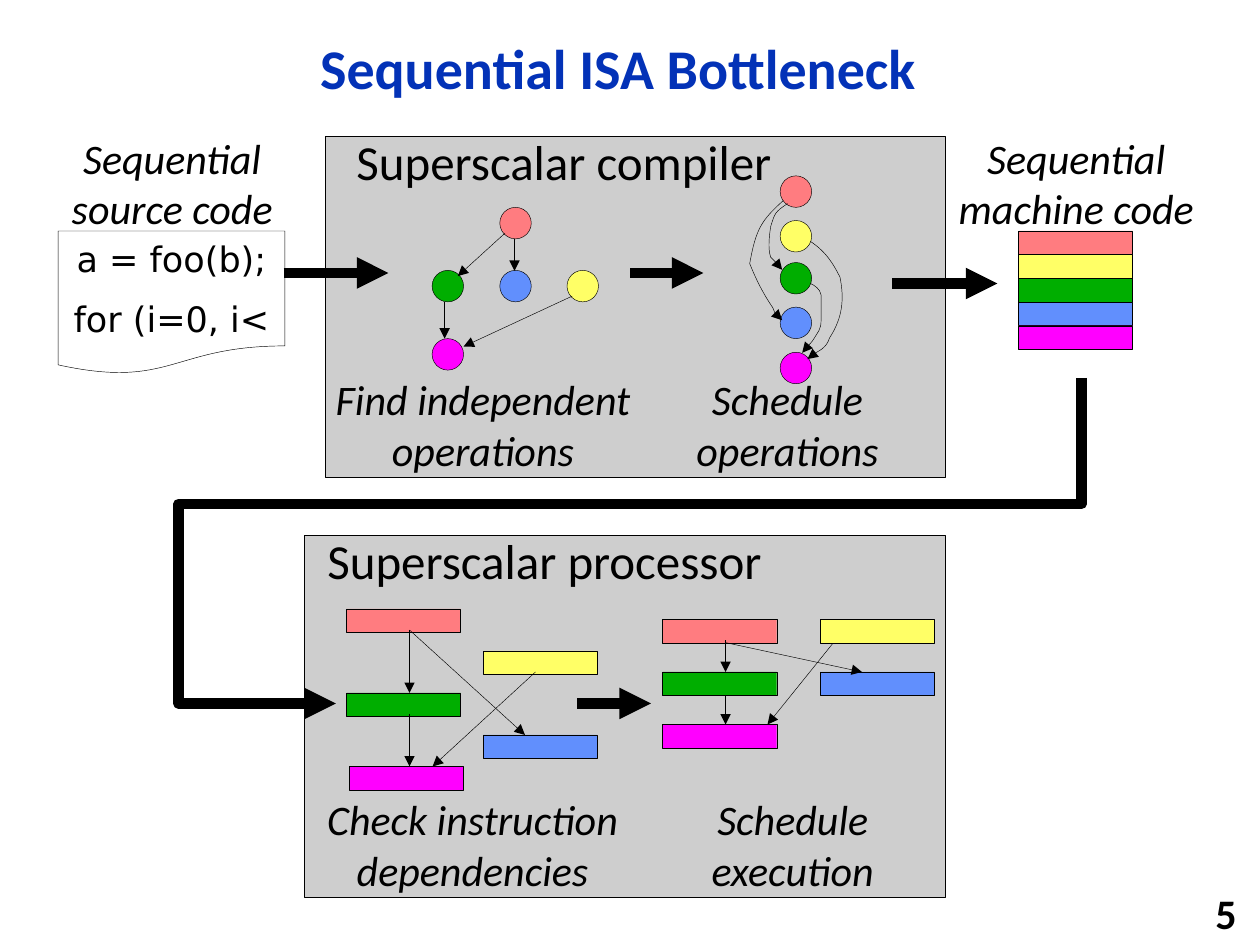
"""Build the slide that shows the bottleneck of a sequential instruction set."""
from lxml.etree import SubElement
from pptx import Presentation
from pptx.dml.color import RGBColor
from pptx.enum.shapes import MSO_CONNECTOR, MSO_SHAPE
from pptx.enum.text import MSO_ANCHOR, PP_ALIGN
from pptx.oxml.ns import qn
from pptx.util import Inches, Pt

THEME = {
    "colors": {
        "red": "FF7C80", "yellow": "FFFF66", "green": "00AE00", "blue": "618FFD",
        "magenta": "FF00FF", "panel": "CECECE", "paper": "FFFFFF", "ink": "000000",
        "title": "0332B7",
    },
    "thin": 0.25,
    "thick": 6,
    "text": {
        "title": {"size": Pt(32), "name": "Calibri", "bold": True},
        "number": {"size": Pt(24), "name": "Calibri", "bold": True},
        "heading": {"size": Pt(28), "name": "Calibri"},
        "caption": {"size": Pt(24), "name": "Calibri", "italic": True},
        "code": {"size": Pt(20), "name": "DejaVu Sans"},
    },
}
COLUMNS = 120
SLIDE_SIZE = {"slide_width": Inches(10), "slide_height": Inches(7.5)}
CELL = SLIDE_SIZE["slide_width"] / COLUMNS

PANELS = [(29, 51, 61, 34.45), (31, 13, 59, 32.5)]
BLOCK_SIZE = (10.88, 2.24)
CIRCLE_SIZE = (3, 3)
CODE_BOX = (5.54, 22, 21.6, 13.65)
CODE_LINES = ["a = foo(b);", "for (i=0, i<"]
COLOR_ORDER = ["red", "yellow", "green", "blue", "magenta"]
BLOCKS = [
    [(33, 58), (46, 62), (33, 66), (46, 70), (33.25, 73)],
    [(63.1, 59), (78.1, 59), (63.1, 64), (78.1, 64), (63.1, 69)],
    [(97, 22 + 2.26 * row) for row in range(len(COLOR_ORDER))],
]
CIRCLES = [
    [(47.6, 19.75), (54, 25.75), (41.15, 25.75), (47.6, 25.75), (41.15, 32.25)],
    [(74.3, top) for top in (16.75, 21, 25, 29.25, 33.55)],
]

THIN_ARROWS = [
    ((39, 60), (39, 66)), ((39, 68), (39, 73)),
    ((51, 64), (41.2, 73)), ((39, 60), (50, 70)),
    ((69.1, 61), (69.1, 64)), ((69.1, 61.2), (82.1, 64)),
    ((79.3, 61.3), (73.1, 69)), ((69.1, 66.2), (69.1, 69)),
    ((48.1, 22.2), (43.6, 26.3)), ((49, 22.8), (49, 25.8)),
    ((42.35, 28.8), (42.35, 32.25)), ((54.5, 28.2), (44.15, 33)),
]
THICK_ARROWS = [
    ((27, 26), (37, 26)), ((60, 26), (67, 26)),
    ((85, 27), (95, 27)), ((55, 67), (62, 67)),
]
FEEDBACK = [(103, 36), (103, 48), (17, 48), (17, 67), (32, 67)]
CURVES = [
    [(77.2, 23), (78.7, 24), (79.4, 25.2), (80, 26.4), (80.4, 28.4), (80.3, 30.2),
     (79, 32.2), (78.7, 33.2), (77.3, 33.7), (77.5, 33.8), (76.9, 34.2)],
    [(75, 19.4), (73.8, 20.2), (73.8, 20.3), (73.4, 21.6), (73.3, 22.3),
     (73.1, 23.6), (73.4, 24.5), (73.7, 24.7), (74.5, 25.7), (74.5, 25.7)],
    [(74.6, 19.1), (72.5, 21), (72, 21.8), (71.4, 25.1), (72, 26.6), (72.7, 28),
     (73.6, 29.3), (73.9, 30), (73.6, 29.6), (74.2, 30.2), (74.2, 30.2),
     (74.5, 30.5), (74.5, 30.5)],
    [(77.2, 27), (77.6, 27.2), (78.1, 27.5), (78.2, 28.1), (78.2, 28.4),
     (78.2, 28.8), (78.2, 29.2), (78.2, 29.3), (78.2, 30.5), (78.2, 30.5),
     (78.2, 31.4), (77.9, 31.6), (77.5, 32.3), (77.3, 32.6), (76.9, 33),
     (76.7, 33.2), (76.7, 33.4), (76.4, 33.6), (76.4, 33.6)],
]

CENTER = {"alignment": PP_ALIGN.CENTER}
LABELS = [
    ("Sequential ISA Bottleneck", (11, 2, 95.75, 9.65), "title", "title",
     {"alignment": PP_ALIGN.CENTER, "line_spacing": 0.9},
     {"word_wrap": True, "vertical_anchor": MSO_ANCHOR.MIDDLE}),
    ("5", (94, 85, 24.95, 3.8), "number", "ink", {"alignment": PP_ALIGN.RIGHT},
     {"word_wrap": False, "vertical_anchor": MSO_ANCHOR.MIDDLE}),
] + [
    (text, place, "heading", "ink", CENTER, {"word_wrap": False})
    for text, place in [
        ("Superscalar processor", (29.65, 49.9, 44.4, 6.85)),
        ("Superscalar compiler", (32.4, 11.9, 42.6, 6.85)),
    ]
] + [
    (text, (left, top, width, 10.9), "caption", "ink", CENTER, {"word_wrap": True})
    for text, left, top, width in [
        ("Sequential source code", 5, 12, 22.8),
        ("Sequential machine code", 89, 12, 27),
        ("Find independent operations", 30, 35, 32),
        ("Schedule operations", 59, 35, 32),
        ("Check instruction dependencies", 28, 75, 34),
        ("Schedule execution", 60, 75, 31),
    ]
]


def cells(*values):
    return [round(value * CELL) for value in values]


def color(name):
    return RGBColor.from_string(THEME["colors"][name])


def apply(target, values):
    for name, value in values.items():
        setattr(target, name, value)


def style_line(shape, weight, arrow=False):
    shape.line.width = Pt(THEME[weight])
    shape.line.color.rgb = color("ink")
    if arrow:
        SubElement(shape.element.spPr.find(qn("a:ln")), qn("a:tailEnd"), type="triangle")


def write(paragraph, text, style, ink, layout):
    apply(paragraph, layout)
    run = paragraph.add_run()
    run.text = text
    apply(run.font, THEME["text"][style])
    run.font.color.rgb = color(ink)


def add_filled(shapes, kind, place, fill):
    shape = shapes.add_shape(kind, *cells(*place))
    shape.shadow.inherit = False
    shape.fill.solid()
    shape.fill.fore_color.rgb = color(fill)
    style_line(shape, "thin")
    return shape


def add_arrow(shapes, start, end, weight):
    arrow = shapes.add_connector(MSO_CONNECTOR.STRAIGHT, *cells(*start, *end))
    style_line(arrow, weight, arrow=True)
    SubElement(arrow.element.spPr, qn("a:effectLst"))


def add_route(shapes, points, weight):
    builder = shapes.build_freeform(*cells(*points[0]))
    builder.add_line_segments([cells(*point) for point in points[1:]], close=False)
    route = builder.convert_to_shape()
    route.shadow.inherit = False
    route.fill.background()
    style_line(route, weight, arrow=True)
    return route


def bend(route):
    segments = list(route.element.spPr.iter(qn("a:lnTo")))
    for first in range(0, len(segments) - 2, 3):
        start, *others = segments[first:first + 3]
        start.tag = qn("a:cubicBezTo")
        for segment in others:
            start.append(segment[0])
            segment.getparent().remove(segment)


def main():
    presentation = Presentation()
    apply(presentation, SLIDE_SIZE)
    shapes = presentation.slides.add_slide(presentation.slide_layouts[6]).shapes
    for place in PANELS:
        add_filled(shapes, MSO_SHAPE.RECTANGLE, place, "panel")
    for kind, size, groups in ((MSO_SHAPE.RECTANGLE, BLOCK_SIZE, BLOCKS),
                               (MSO_SHAPE.OVAL, CIRCLE_SIZE, CIRCLES)):
        for corners in groups:
            for fill, corner in zip(COLOR_ORDER, corners):
                add_filled(shapes, kind, (*corner, *size), fill)
    frame = add_filled(shapes, MSO_SHAPE.FLOWCHART_DOCUMENT, CODE_BOX, "paper").text_frame
    apply(frame, {"word_wrap": False, "vertical_anchor": MSO_ANCHOR.MIDDLE})
    for index, text in enumerate(CODE_LINES):
        paragraph = frame.add_paragraph() if index else frame.paragraphs[0]
        write(paragraph, text, "code", "ink", {**CENTER, "space_before": Pt(10 * index)})
    for controls in CURVES:
        bend(add_route(shapes, controls, "thin"))
    add_route(shapes, FEEDBACK, "thick")
    for weight, arrows in (("thin", THIN_ARROWS), ("thick", THICK_ARROWS)):
        for start, end in arrows:
            add_arrow(shapes, start, end, weight)
    for text, place, style, ink, layout, frame_format in LABELS:
        frame = shapes.add_textbox(*cells(*place)).text_frame
        apply(frame, frame_format)
        write(frame.paragraphs[0], text, style, ink, layout)
    presentation.save("out.pptx")


if __name__ == "__main__":
    main()
